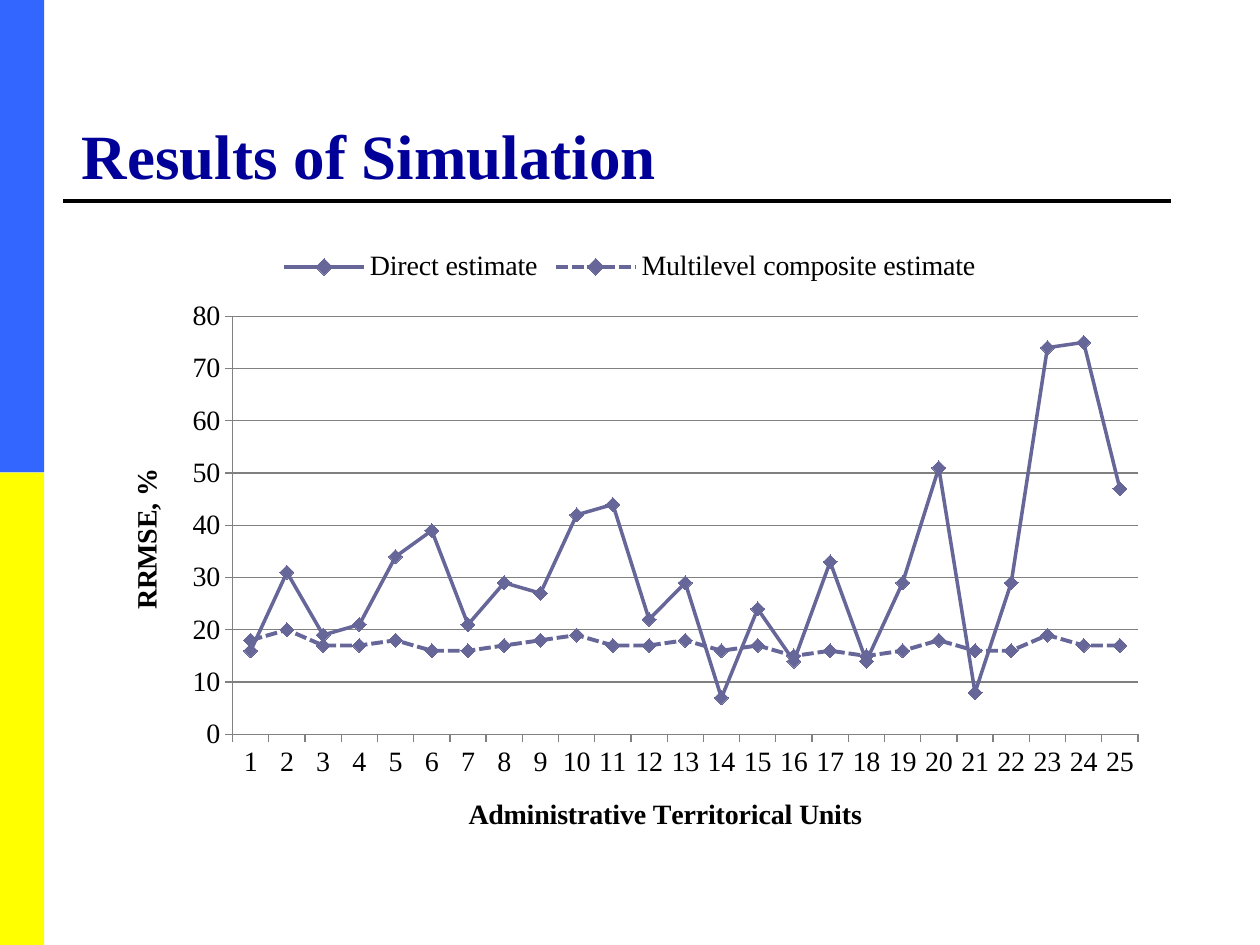
from pptx import Presentation, util as u
from pptx.chart.data import CategoryChartData
from pptx.dml.color import RGBColor
from pptx.enum import chart as ch, dml, shapes, text
from pptx.oxml.ns import qn
from lxml import etree

FONT = "Times New Roman"
COLORS = {"blue": "3366FF", "yellow": "FFFF00", "navy": "000099",
          "black": "000000", "slate": "666699", "grey": "808080"}
DIRECT = [16, 31, 19, 21, 34, 39, 21, 29, 27, 42, 44, 22, 29,
          7, 24, 14, 33, 14, 29, 51, 8, 29, 74, 75, 47]
MULTILEVEL = [18, 20, 17, 17, 18, 16, 16, 17, 18, 19, 17, 17, 18,
              16, 17, 15, 16, 15, 16, 18, 16, 16, 19, 17, 17]
WIDTH, HEIGHT = u.Inches(10), u.Inches(7.5)


def color(name):
    """Return the named colour."""
    return RGBColor.from_string(COLORS[name])


def box(left, top, width, height):
    """Turn shares of the slide into lengths."""
    return (round(left * WIDTH), round(top * HEIGHT),
            round(width * WIDTH), round(height * HEIGHT))


def style_font(font, size, shade, bold):
    """Give a font its face, size, colour and weight."""
    font.name, font.size, font.bold = FONT, u.Pt(size), bold
    font.color.rgb = color(shade)


def add_side_band(slide, area):
    """Stack two equal colour blocks inside the area."""
    left, top, width, height = area
    for row, shade in enumerate(("blue", "yellow")):
        block = slide.shapes.add_shape(shapes.MSO_SHAPE.RECTANGLE, left,
                                       top + row * height // 2, width, height // 2)
        block.shadow.inherit = False
        block.fill.solid()
        block.fill.fore_color.rgb = color(shade)
        block.line.fill.background()


def add_heading(slide, area, wording):
    """Fill the title placeholder and rule a line below it."""
    left, top, width, height = area
    heading = slide.shapes.title
    heading.left, heading.top, heading.width, heading.height = area
    frame = heading.text_frame
    frame.text = wording
    frame.word_wrap = True
    frame.vertical_anchor = text.MSO_ANCHOR.BOTTOM
    frame.paragraphs[0].alignment = text.PP_ALIGN.LEFT
    style_font(frame.paragraphs[0].runs[0].font, 36, "navy", True)
    level = top + height + u.Inches(0.02)
    rule = slide.shapes.add_connector(shapes.MSO_CONNECTOR.STRAIGHT,
                                      left - u.Inches(0.05), level,
                                      left + width + u.Inches(0.04), level)
    rule.line.color.rgb = color("black")
    rule.line.width = u.Pt(2.25)
    etree.SubElement(rule._element.spPr, qn("a:effectLst"))


def style_axis(axis, wording):
    """Title an axis and set its lines and labels."""
    axis.axis_title.text_frame.text = wording
    style_font(axis.axis_title.text_frame.paragraphs[0].runs[0].font, 16, "black", True)
    style_font(axis.tick_labels.font, 16, "black", False)
    axis.major_tick_mark = ch.XL_TICK_MARK.OUTSIDE
    axis.format.line.color.rgb = color("grey")


def style_series(series, width, dash):
    """Draw a series as a slate line with diamond markers."""
    series.smooth = False
    series.format.line.color.rgb = color("slate")
    series.format.line.width = u.Pt(width)
    series.format.line.dash_style = dash
    marker = series.marker
    marker.style, marker.size = ch.XL_MARKER_STYLE.DIAMOND, 8
    marker.format.fill.solid()
    marker.format.fill.fore_color.rgb = color("slate")
    marker.format.line.color.rgb = color("slate")


def add_error_chart(slide, area):
    """Plot the error of both estimates for each unit."""
    errors = CategoryChartData()
    errors.categories = [str(unit) for unit in range(1, len(DIRECT) + 1)]
    errors.add_series("Direct estimate", DIRECT)
    errors.add_series("Multilevel composite estimate", MULTILEVEL)
    chart = slide.shapes.add_chart(ch.XL_CHART_TYPE.LINE_MARKERS, *area, errors).chart
    chart.has_title = False
    style_font(chart.font, 16, "black", False)
    chart.has_legend = True
    chart.legend.position = ch.XL_LEGEND_POSITION.TOP
    chart.legend.include_in_layout = False
    style_font(chart.legend.font, 16, "black", False)
    style_axis(chart.category_axis, "Administrative Territorical Units")
    style_axis(chart.value_axis, "RRMSE, %")
    chart.value_axis.minimum_scale, chart.value_axis.maximum_scale = 0, 80
    chart.value_axis.major_unit = 10
    chart.value_axis.has_major_gridlines = True
    chart.value_axis.major_gridlines.format.line.color.rgb = color("grey")
    plot = chart.plots[0]
    plot.vary_by_categories = False
    direct, multilevel = plot.series
    style_series(direct, 2, dml.MSO_LINE.SOLID)
    style_series(multilevel, 2.25, dml.MSO_LINE.SQUARE_DOT)


def main():
    """Build and save the slide."""
    deck = Presentation()
    deck.slide_width, deck.slide_height = WIDTH, HEIGHT
    slide = deck.slides.add_slide(deck.slide_layouts[5])
    add_side_band(slide, box(0, 0, 0.035, 1))
    add_heading(slide, box(0.055, 0.07, 0.87, 0.14), "Results of Simulation")
    add_error_chart(slide, box(0.08, 0.25, 0.84, 0.66))
    deck.save("out.pptx")


if __name__ == "__main__":
    main()
